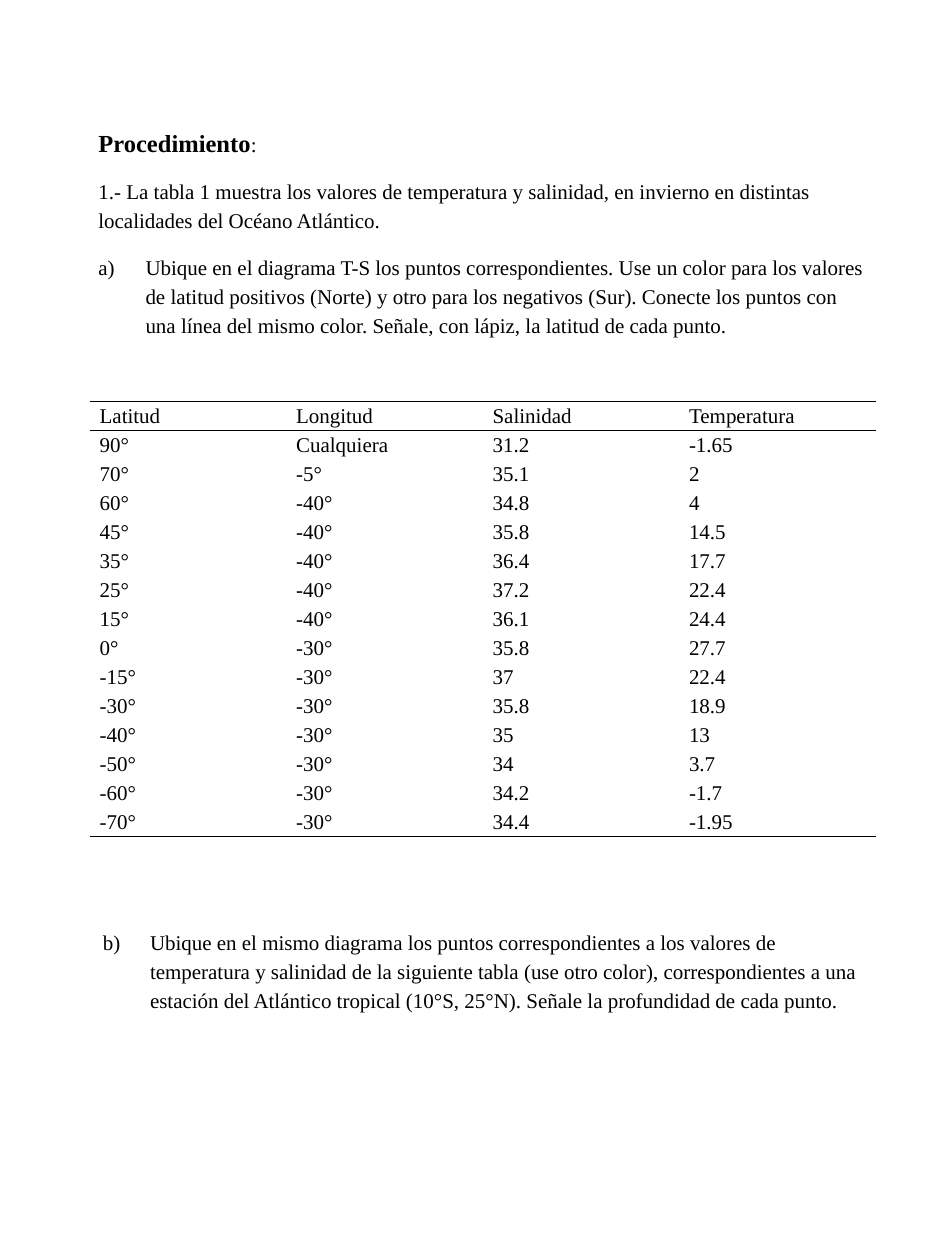
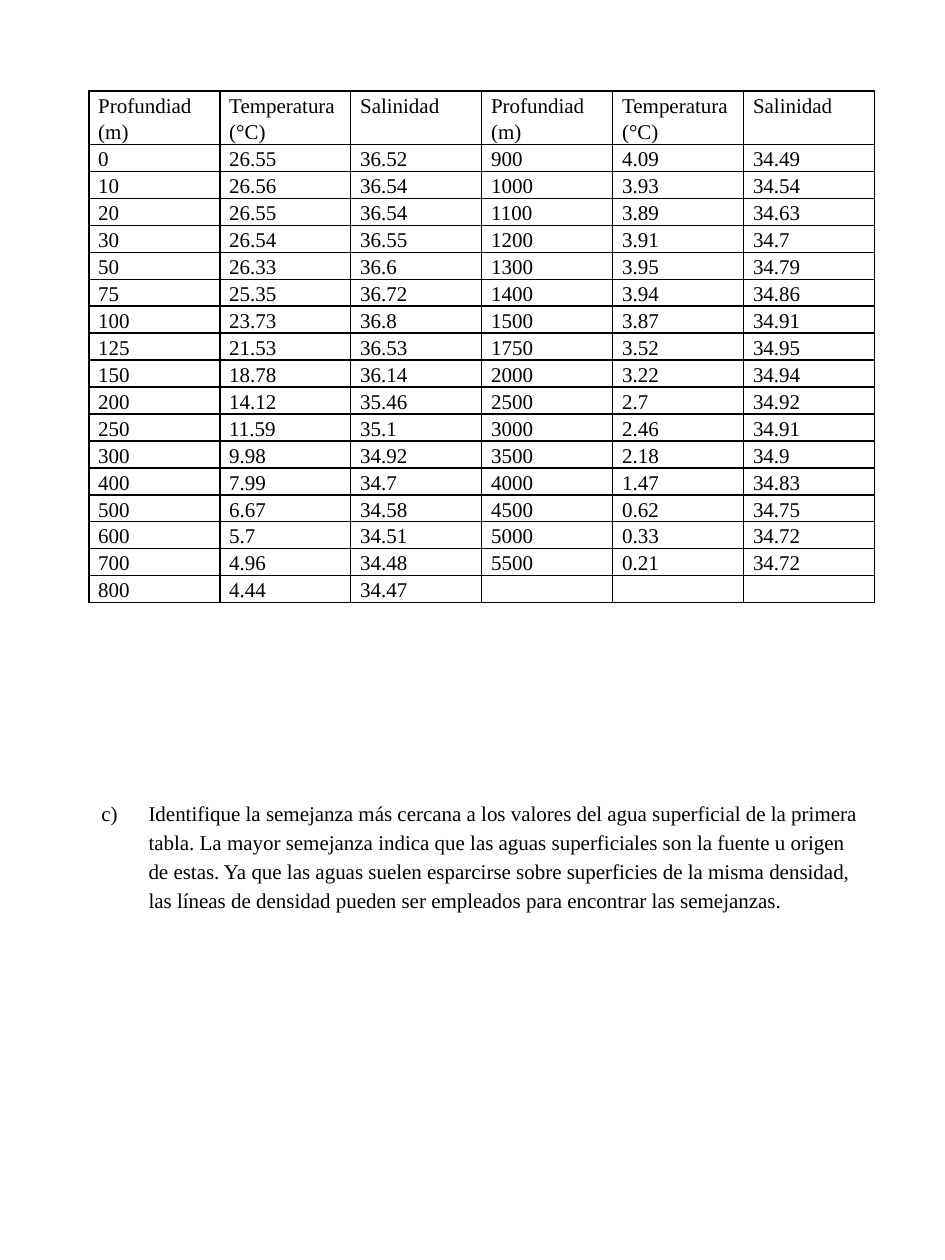
from lxml import etree
from pptx import Presentation
from pptx.dml.color import RGBColor
from pptx.enum.text import MSO_ANCHOR, MSO_AUTO_SIZE
from pptx.oxml.ns import qn
from pptx.util import Cm, Pt

GROW = MSO_AUTO_SIZE.SHAPE_TO_FIT_TEXT
TOP = MSO_ANCHOR.TOP
COLORS = {"ink": "000000"}
FONT = "Times New Roman"
SIZE = 12
LEAD = 1.15
TIGHT = Pt(15.35)  # fixed line height of the dense depth table
LIST, PAIR = 1, 3  # layouts with one and two body placeholders
SIDES = {"L": "lnL", "R": "lnR", "T": "lnT", "B": "lnB"}

INTRO = ("1.- La tabla 1 muestra los valores de temperatura y salinidad, en "
         "invierno en distintas localidades del Océano Atlántico.")
TASK_A = ("Ubique en el diagrama T-S los puntos correspondientes. Use un color "
          "para los valores de latitud positivos (Norte) y otro para los "
          "negativos (Sur). Conecte los puntos con una línea del mismo color. "
          "Señale, con lápiz, la latitud de cada punto.")
TASK_B = ("Ubique en el mismo diagrama los puntos correspondientes a los valores "
          "de temperatura y salinidad de la siguiente tabla (use otro color), "
          "correspondientes a una estación del Atlántico tropical (10°S, 25°N). "
          "Señale la profundidad de cada punto.")
TASK_C = ("Identifique la semejanza más cercana a los valores del agua "
          "superficial de la primera tabla. La mayor semejanza indica que las "
          "aguas superficiales son la fuente u origen de estas. Ya que las aguas "
          "suelen esparcirse sobre superficies de la misma densidad, las líneas "
          "de densidad pueden ser empleados para encontrar las semejanzas.")

PLACES = [
    ("Latitud", "Longitud", "Salinidad", "Temperatura"),
    ("90°", "Cualquiera", "31.2", "-1.65"),
    ("70°", "-5°", "35.1", "2"),
    ("60°", "-40°", "34.8", "4"),
    ("45°", "-40°", "35.8", "14.5"),
    ("35°", "-40°", "36.4", "17.7"),
    ("25°", "-40°", "37.2", "22.4"),
    ("15°", "-40°", "36.1", "24.4"),
    ("0°", "-30°", "35.8", "27.7"),
    ("-15°", "-30°", "37", "22.4"),
    ("-30°", "-30°", "35.8", "18.9"),
    ("-40°", "-30°", "35", "13"),
    ("-50°", "-30°", "34", "3.7"),
    ("-60°", "-30°", "34.2", "-1.7"),
    ("-70°", "-30°", "34.4", "-1.95"),
]
HEAD = ("Profundiad (m)", "Temperatura (°C)", "Salinidad")
DEPTHS = [
    HEAD * 2,
    ("0", "26.55", "36.52", "900", "4.09", "34.49"),
    ("10", "26.56", "36.54", "1000", "3.93", "34.54"),
    ("20", "26.55", "36.54", "1100", "3.89", "34.63"),
    ("30", "26.54", "36.55", "1200", "3.91", "34.7"),
    ("50", "26.33", "36.6", "1300", "3.95", "34.79"),
    ("75", "25.35", "36.72", "1400", "3.94", "34.86"),
    ("100", "23.73", "36.8", "1500", "3.87", "34.91"),
    ("125", "21.53", "36.53", "1750", "3.52", "34.95"),
    ("150", "18.78", "36.14", "2000", "3.22", "34.94"),
    ("200", "14.12", "35.46", "2500", "2.7", "34.92"),
    ("250", "11.59", "35.1", "3000", "2.46", "34.91"),
    ("300", "9.98", "34.92", "3500", "2.18", "34.9"),
    ("400", "7.99", "34.7", "4000", "1.47", "34.83"),
    ("500", "6.67", "34.58", "4500", "0.62", "34.75"),
    ("600", "5.7", "34.51", "5000", "0.33", "34.72"),
    ("700", "4.96", "34.48", "5500", "0.21", "34.72"),
    ("800", "4.44", "34.47", "", "", ""),
]


def add_run(para, text, size=SIZE, bold=False):
    run = para.add_run()
    run.text = text
    font = run.font
    font.name, font.size, font.bold = FONT, Pt(size), bold
    font.color.rgb = RGBColor.from_string(COLORS["ink"])


def set_mark(para, start):
    """Number the paragraph a), b), c) from start; None leaves it plain."""
    props = para._p.get_or_add_pPr()
    hang = Cm(0.95) if start else 0
    props.set("marL", str(hang))
    props.set("indent", str(-hang))
    if start:
        mark = etree.SubElement(props, qn("a:buAutoNum"), type="alphaLcParenR")
        if start > 1:
            mark.set("startAt", str(start))
    else:
        etree.SubElement(props, qn("a:buNone"))


def fill_body(shape, box, paras):
    """Write (start, runs) paragraphs in a body placeholder moved to box."""
    shape.left, shape.top, shape.width, shape.height = map(Cm, box)
    frame = shape.text_frame
    frame.word_wrap, frame.auto_size = True, GROW
    frame.vertical_anchor = TOP
    for i, (start, runs) in enumerate(paras):
        para = frame.add_paragraph() if i else frame.paragraphs[0]
        set_mark(para, start)
        para.line_spacing = LEAD
        para.space_before, para.space_after = Pt(0), Pt(10)
        for run in runs:
            add_run(para, *run)


def set_edges(cell, sides):
    """Rule the named sides of a cell and clear the others."""
    props = cell._tc.get_or_add_tcPr()
    for side, tag in SIDES.items():
        line = etree.SubElement(props, qn("a:" + tag), w=str(Pt(1)))
        if side in sides:
            fill = etree.SubElement(line, qn("a:solidFill"))
            etree.SubElement(fill, qn("a:srgbClr"), val=COLORS["ink"])
        else:
            etree.SubElement(line, qn("a:noFill"))


def fill_cell(cell, text, sides, lead):
    cell.margin_left = cell.margin_right = Cm(0.19)
    cell.margin_top = cell.margin_bottom = 0
    set_edges(cell, sides)
    cell.fill.background()
    para = cell.text_frame.paragraphs[0]
    para.line_spacing = lead
    if text:
        add_run(para, text)
    else:
        etree.SubElement(para._p, qn("a:endParaRPr"), sz=str(SIZE * 100))


def add_grid(slide, box, rows, edges, lead):
    """Draw a table whose cell borders in row r are edges(r)."""
    left, top, width, pitch = map(Cm, box)
    grid = slide.shapes.add_table(len(rows), len(rows[0]), left, top, width,
                                  pitch * len(rows)).table
    grid.first_row = grid.horz_banding = False
    for r, row in enumerate(rows):
        for c, text in enumerate(row):
            fill_cell(grid.cell(r, c), text, edges(r), lead)


def place_edges(r):
    return {0: "TB", 1: "T", len(PLACES) - 1: "B"}.get(r, "")


def add_page(deck, layout):
    """Add a slide without its title; return it with its body placeholders."""
    slide = deck.slides.add_slide(deck.slide_layouts[layout])
    title = slide.shapes.title._element
    title.getparent().remove(title)
    return slide, list(slide.placeholders)


def place_page(deck):
    slide, (intro, task) = add_page(deck, PAIR)
    fill_body(intro, (1.73, 2.37, 16, 4.6), [
        (None, [("Procedimiento", 14, True), (":",)]),
        (None, [(INTRO,)]),
        (1, [(TASK_A,)]),
    ])
    add_grid(slide, (1.82, 8.09, 15.84, 0.58), PLACES, place_edges, LEAD)
    fill_body(task, (1.82, 18.54, 15.84, 2.03), [(2, [(TASK_B,)])])


def depth_page(deck):
    slide, (task,) = add_page(deck, LIST)
    add_grid(slide, (1.79, 1.83, 15.84, 0.54), DEPTHS, lambda r: "LRTB", TIGHT)
    fill_body(task, (1.79, 15.93, 15.84, 2.62), [(3, [(TASK_C,)])])


def main():
    deck = Presentation()
    deck.slide_width, deck.slide_height = Cm(19.05), Cm(25.4)
    place_page(deck)
    depth_page(deck)
    deck.save("out.pptx")


if __name__ == "__main__":
    main()
